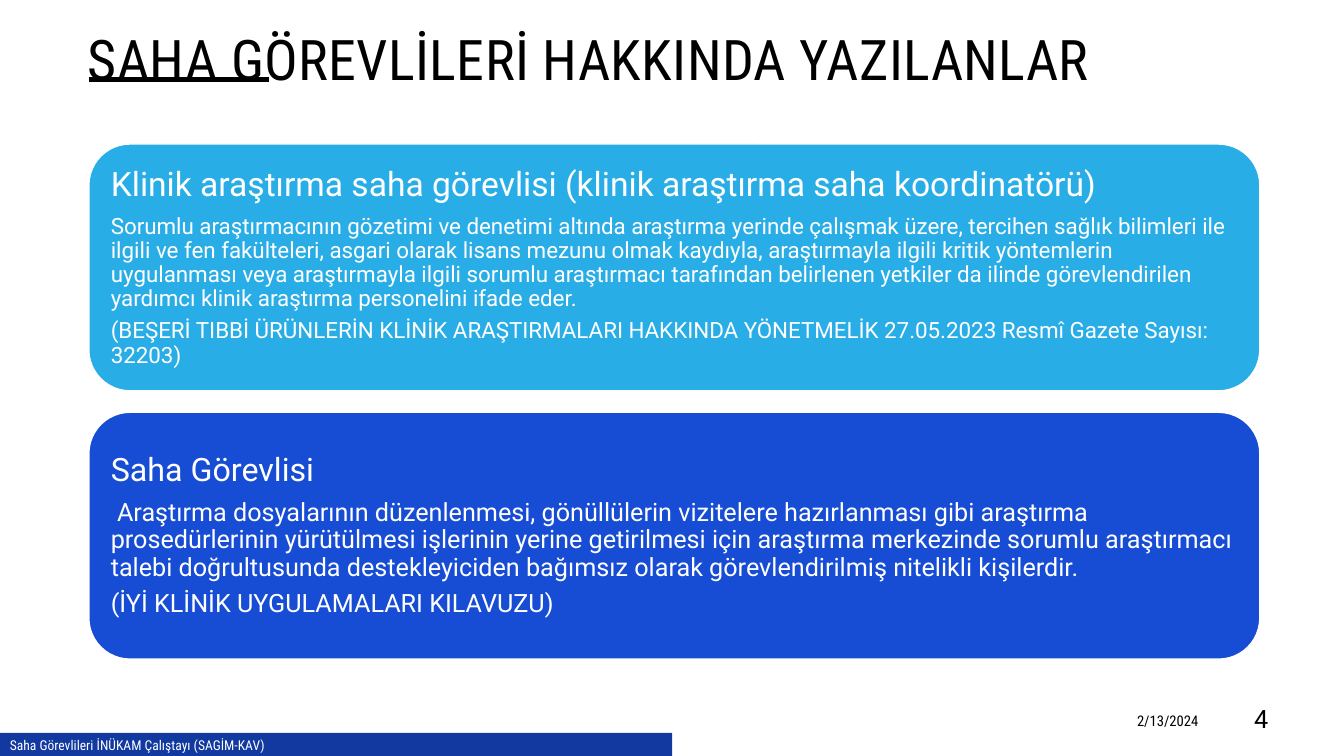
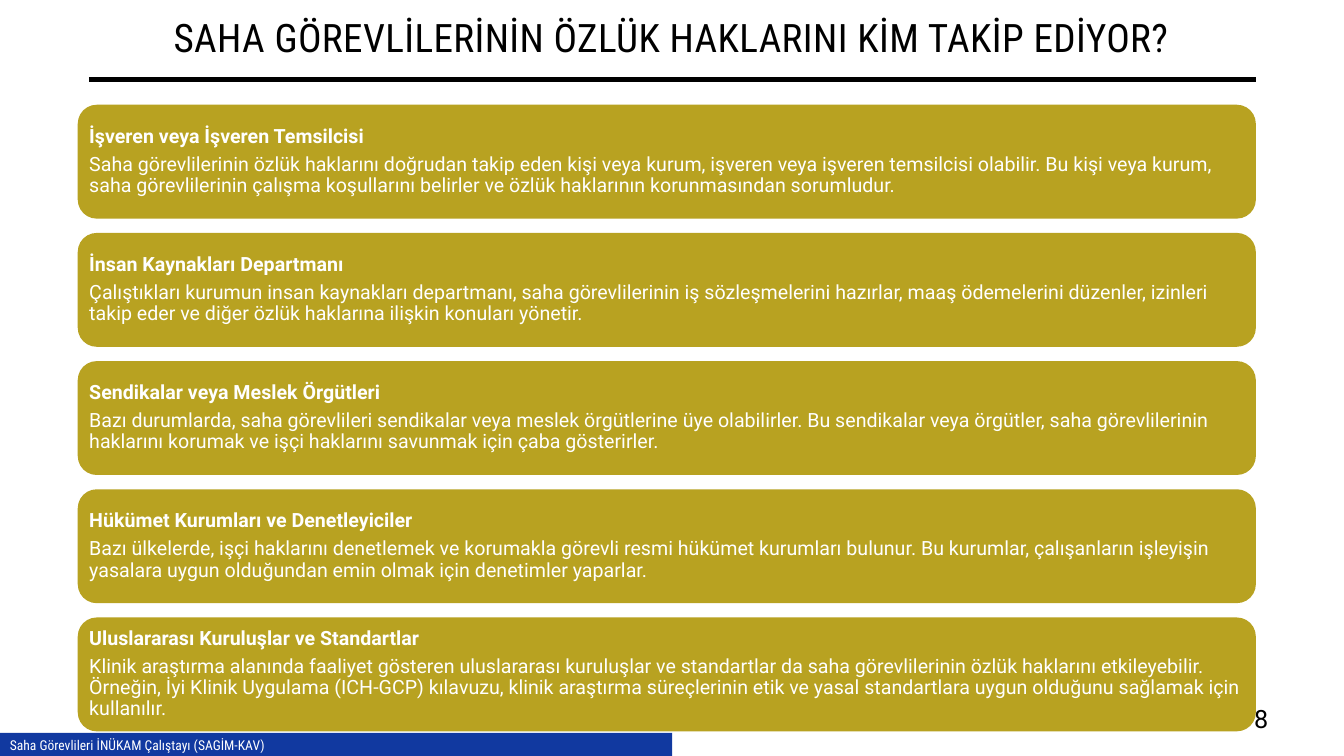
from lxml import etree
from pptx import Presentation
from pptx.dml.color import RGBColor
from pptx.enum.shapes import MSO_CONNECTOR, MSO_SHAPE
from pptx.enum.text import MSO_ANCHOR, PP_ALIGN
from pptx.oxml.ns import qn
from pptx.util import Cm, Pt

STRAIGHT = MSO_CONNECTOR.STRAIGHT
RECTANGLE, ROUNDED = MSO_SHAPE.RECTANGLE, MSO_SHAPE.ROUNDED_RECTANGLE
TOP, MIDDLE = MSO_ANCHOR.TOP, MSO_ANCHOR.MIDDLE
LEFT, CENTER, RIGHT = PP_ALIGN.LEFT, PP_ALIGN.CENTER, PP_ALIGN.RIGHT

BLACK, WHITE = "000000", "FFFFFF"
SKY, BLUE, NAVY, OLIVE = "29ADE7", "174CD5", "1139A0", "B8A221"
BODY_FONT, HEAD_FONT = "Roboto", "Roboto Condensed"
FOOTER = "Saha Görevlileri İNÜKAM Çalıştayı (SAGİM-KAV)"
RULE_LEFT, RULE_TOP = 2.24, 2.01
TIGHT = 0.9
SPACE_AFTER_RATIO = 0.35

DEFINITIONS = [
    (SKY, [
        ("Klinik araştırma saha görevlisi (klinik araştırma saha koordinatörü)", 24),
        ("Sorumlu araştırmacının gözetimi ve denetimi altında araştırma yerinde çalışmak üzere, "
         "tercihen sağlık bilimleri ile ilgili ve fen fakülteleri, asgari olarak lisans mezunu "
         "olmak kaydıyla, araştırmayla ilgili kritik yöntemlerin uygulanması veya araştırmayla "
         "ilgili sorumlu araştırmacı tarafından belirlenen yetkiler da ilinde görevlendirilen "
         "yardımcı klinik araştırma personelini ifade eder.", 16),
        ("(BEŞERİ TIBBİ ÜRÜNLERİN KLİNİK ARAŞTIRMALARI HAKKINDA YÖNETMELİK 27.05.2023 "
         "Resmî Gazete Sayısı: 32203)", 16),
    ]),
    (BLUE, [
        ("Saha Görevlisi", 23),
        (" Araştırma dosyalarının düzenlenmesi, gönüllülerin vizitelere hazırlanması gibi "
         "araştırma prosedürlerinin yürütülmesi işlerinin yerine getirilmesi için araştırma "
         "merkezinde sorumlu araştırmacı talebi doğrultusunda destekleyiciden bağımsız olarak "
         "görevlendirilmiş nitelikli kişilerdir.", 18),
        ("(İYİ KLİNİK UYGULAMALARI KILAVUZU)", 18),
    ]),
]

RIGHTS_FOLLOWERS = [
    ("İşveren veya İşveren Temsilcisi",
     "Saha görevlilerinin özlük haklarını doğrudan takip eden kişi veya kurum, işveren veya "
     "işveren temsilcisi olabilir. Bu kişi veya kurum, saha görevlilerinin çalışma koşullarını "
     "belirler ve özlük haklarının korunmasından sorumludur."),
    ("İnsan Kaynakları Departmanı",
     "Çalıştıkları kurumun insan kaynakları departmanı, saha görevlilerinin iş sözleşmelerini "
     "hazırlar, maaş ödemelerini düzenler, izinleri takip eder ve diğer özlük haklarına ilişkin "
     "konuları yönetir."),
    ("Sendikalar veya Meslek Örgütleri",
     "Bazı durumlarda, saha görevlileri sendikalar veya meslek örgütlerine üye olabilirler. Bu "
     "sendikalar veya örgütler, saha görevlilerinin haklarını korumak ve işçi haklarını savunmak "
     "için çaba gösterirler."),
    ("Hükümet Kurumları ve Denetleyiciler",
     "Bazı ülkelerde, işçi haklarını denetlemek ve korumakla görevli resmi hükümet kurumları "
     "bulunur. Bu kurumlar, çalışanların işleyişin yasalara uygun olduğundan emin olmak için "
     "denetimler yaparlar."),
    ("Uluslararası Kuruluşlar ve Standartlar",
     "Klinik araştırma alanında faaliyet gösteren uluslararası kuruluşlar ve standartlar da saha "
     "görevlilerinin özlük haklarını etkileyebilir. Örneğin, İyi Klinik Uygulama (ICH-GCP) "
     "kılavuzu, klinik araştırma süreçlerinin etik ve yasal standartlara uygun olduğunu sağlamak "
     "için kullanılır."),
]


def color(code):
    return RGBColor.from_string(code)


def apply(target, **values):
    for name, value in values.items():
        setattr(target, name, value)


def set_frame(box, anchor, side=0.25, edge=0.13):
    """Set wrapping, anchor and the side and top/bottom margins in cm."""
    apply(box.text_frame, word_wrap=True, vertical_anchor=anchor,
          margin_left=Cm(side), margin_right=Cm(side),
          margin_top=Cm(edge), margin_bottom=Cm(edge))


def write(para, text, size, font=BODY_FONT, ink=BLACK, bold=False, **layout):
    apply(para, **layout)
    span = para.add_run()
    span.text = text
    apply(span.font, size=Pt(size), name=font, bold=bold)
    span.font.color.rgb = color(ink)
    return span


def add_text(page, place, text, size, anchor=MIDDLE, edge=0.13, **style):
    box = page.shapes.add_textbox(*map(Cm, place))
    set_frame(box, anchor, edge=edge)
    return write(box.text_frame.paragraphs[0], text, size, **style)


def add_block(page, kind, place, fill, outline=None):
    block = page.shapes.add_shape(kind, *map(Cm, place))
    block.shadow.inherit = False
    block.fill.solid()
    block.fill.fore_color.rgb = color(fill)
    if outline:
        block.line.color.rgb = color(outline)
        block.line.width = Pt(1)
    else:
        block.line.fill.background()
    return block


def add_panel(page, place, fill, lines, inset, outline=None):
    """Add a rounded panel; lines holds (text, size, bold) tuples."""
    panel = add_block(page, ROUNDED, place, fill, outline)
    set_frame(panel, MIDDLE, inset, inset)
    frame = panel.text_frame
    for index, (text, size, bold) in enumerate(lines):
        para = frame.add_paragraph() if index else frame.paragraphs[0]
        write(para, text, size, ink=WHITE, bold=bold, alignment=LEFT,
              line_spacing=TIGHT, space_after=Pt(SPACE_AFTER_RATIO * size))


def add_title(page, place, text, size, rule_right, **style):
    rule = page.shapes.add_connector(
        STRAIGHT, Cm(RULE_LEFT), Cm(RULE_TOP), Cm(rule_right), Cm(RULE_TOP))
    rule.line.color.rgb = color(BLACK)
    rule.line.width = Pt(3.5)
    etree.SubElement(rule._element.spPr, qn("a:effectLst"))
    span = add_text(page, place, text, size, font=HEAD_FONT, **style)
    span.font._element.set("spc", "30")


def add_footer(page, number):
    band = add_block(page, RECTANGLE, (0, 18.47, 16.94, 0.6), NAVY)
    set_frame(band, MIDDLE, edge=0)
    write(band.text_frame.paragraphs[0], FOOTER, 9.7, HEAD_FONT, WHITE, alignment=LEFT)
    add_text(page, (30.33, 17.65, 1.88, 1.02), str(number), 18,
             alignment=RIGHT, line_spacing=TIGHT)


def build_definitions(page):
    add_title(page, (1.96, 0.38, 30, 5.05), "SAHA GÖREVLİLERİ HAKKINDA YAZILANLAR",
              40, 6.78, anchor=TOP, edge=0.23)
    add_footer(page, 4)
    add_text(page, (23.24, 17.65, 7.21, 1.02), "2/13/2024", 10.5,
             font=HEAD_FONT, alignment=RIGHT)
    for row, (fill, texts) in enumerate(DEFINITIONS):
        lines = [(text, size, False) for text, size in texts]
        add_panel(page, (2.24, 3.63 + 6.76 * row, 29.51, 6.22), fill, lines, 0.25, WHITE)


def build_rights(page):
    add_title(page, (2.08, 0.05, 29.69, 1.93),
              "SAHA GÖREVLİLERİNİN ÖZLÜK HAKLARINI KİM TAKİP EDİYOR?",
              28, 31.65, alignment=CENTER, line_spacing=TIGHT)
    add_footer(page, 8)
    for row, (heading, detail) in enumerate(RIGHTS_FOLLOWERS):
        lines = [(heading, 14, True), (detail, 14, False)]
        add_panel(page, (1.96, 2.64 + 3.23 * row, 29.69, 2.87), OLIVE, lines, 0.15)


def main():
    deck = Presentation()
    apply(deck, slide_width=Cm(33.87), slide_height=Cm(19.05))
    blank = deck.slide_layouts[6]
    for build in (build_definitions, build_rights):
        build(deck.slides.add_slide(blank))
    deck.save("out.pptx")


if __name__ == "__main__":
    main()
